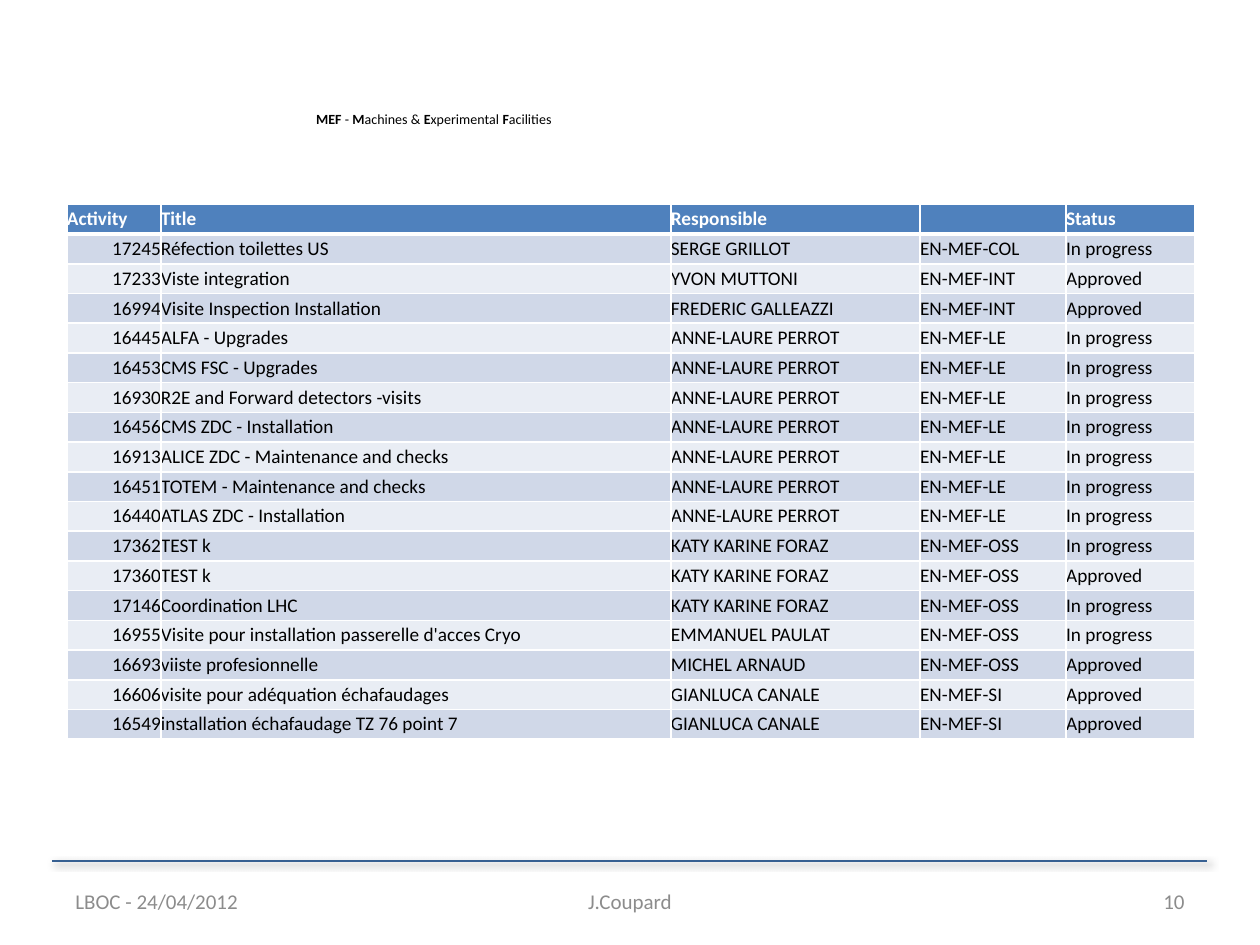
from lxml import etree
from pptx import Presentation
from pptx.dml.color import RGBColor
from pptx.enum.shapes import MSO_CONNECTOR
from pptx.enum.text import MSO_ANCHOR, MSO_AUTO_SIZE, PP_ALIGN
from pptx.oxml.ns import qn
from pptx.util import Pt

LEFT, CENTER, RIGHT = PP_ALIGN.LEFT, PP_ALIGN.CENTER, PP_ALIGN.RIGHT
MIDDLE = MSO_ANCHOR.MIDDLE
STRAIGHT = MSO_CONNECTOR.STRAIGHT
FIT_TEXT = MSO_AUTO_SIZE.SHAPE_TO_FIT_TEXT

FONT = "Calibri"
BLACK, WHITE, GREY = "000000", "FFFFFF", "8C8C8C"
RULE_BLUE, HEADER_BLUE = "376092", "4F81BD"
BANDS = ("E9EDF4", "D0D8E8")

COLUMN_WIDTHS = (53.8, 291.4, 142.4, 83.5, 73.3)
ROW_HEIGHT = 17
HEADER = ("Activity", "Title", "Responsible", "", "Status")
ACTIVITIES = (
    ("17245", "Réfection toilettes US", "SERGE GRILLOT", "COL", "In progress"),
    ("17233", "Viste integration", "YVON MUTTONI", "INT", "Approved"),
    ("16994", "Visite Inspection Installation", "FREDERIC GALLEAZZI", "INT", "Approved"),
    ("16445", "ALFA - Upgrades", "ANNE-LAURE PERROT", "LE", "In progress"),
    ("16453", "CMS FSC - Upgrades", "ANNE-LAURE PERROT", "LE", "In progress"),
    ("16930", "R2E and Forward detectors -visits", "ANNE-LAURE PERROT", "LE", "In progress"),
    ("16456", "CMS ZDC - Installation", "ANNE-LAURE PERROT", "LE", "In progress"),
    ("16913", "ALICE ZDC - Maintenance and checks", "ANNE-LAURE PERROT", "LE", "In progress"),
    ("16451", "TOTEM - Maintenance and checks", "ANNE-LAURE PERROT", "LE", "In progress"),
    ("16440", "ATLAS ZDC - Installation", "ANNE-LAURE PERROT", "LE", "In progress"),
    ("17362", "TEST k", "KATY KARINE FORAZ", "OSS", "In progress"),
    ("17360", "TEST k", "KATY KARINE FORAZ", "OSS", "Approved"),
    ("17146", "Coordination LHC", "KATY KARINE FORAZ", "OSS", "In progress"),
    ("16955", "Visite pour installation passerelle d'acces Cryo", "EMMANUEL PAULAT", "OSS", "In progress"),
    ("16693", "viiste profesionnelle", "MICHEL ARNAUD", "OSS", "Approved"),
    ("16606", "visite pour adéquation échafaudages", "GIANLUCA CANALE", "SI", "Approved"),
    ("16549", "installation échafaudage TZ 76 point 7", "GIANLUCA CANALE", "SI", "Approved"),
)
UNIT_NAME = (("MEF ", True), ("- ", False), ("M", True), ("achines & ", False),
             ("E", True), ("xperimental ", False), ("F", True), ("acilities", False))
FOOTERS = (
    ("LBOC - 24/04/2012", 36, 168, LEFT),
    ("J.Coupard", 246, 228, CENTER),
    ("10", 516, 168, RIGHT),
)


def color(value):
    return RGBColor.from_string(value)


def write(para, text, size=11, fill=BLACK, bold=False, align=LEFT):
    """Append one formatted span; empty text only fixes the line height."""
    para.alignment = align
    if not text:
        etree.SubElement(para._p, qn("a:endParaRPr"), sz=str(size * 100))
        return
    span = para.add_run()
    span.text = text
    span.font.name = FONT
    span.font.size = Pt(size)
    span.font.bold = bold
    span.font.color.rgb = color(fill)


def add_box(page, left, top, width, height):
    return page.shapes.add_textbox(Pt(left), Pt(top), Pt(width), Pt(height)).text_frame


def add_unit_name(page):
    frame = add_box(page, 173.5, 59.8, 150.5, 17.3)
    frame.word_wrap = False
    frame.auto_size = FIT_TEXT
    for text, bold in UNIT_NAME:
        write(frame.paragraphs[0], text, size=8, bold=bold)


def add_footer(page, text, left, width, align):
    frame = add_box(page, left, 500.5, width, 28.8)
    frame.word_wrap = True
    frame.vertical_anchor = MIDDLE
    write(frame.paragraphs[0], text, size=12, fill=GREY, align=align)


def add_footer_rule(page):
    rule = page.shapes.add_connector(STRAIGHT, Pt(30), Pt(492), Pt(690), Pt(492))
    rule.line.color.rgb = color(RULE_BLUE)
    rule.line.width = Pt(1.5)
    effects = etree.SubElement(rule._element.spPr, qn("a:effectLst"))
    shadow = etree.SubElement(effects, qn("a:outerShdw"), blurRad=str(Pt(4)),
                              dist=str(Pt(2)), dir=str(45 * 60000))
    tone = etree.SubElement(shadow, qn("a:srgbClr"), val=BLACK)
    etree.SubElement(tone, qn("a:alpha"), val="40000")


def set_borders(cell, top, bottom):
    for side, width in (("L", 1), ("R", 1), ("T", top), ("B", bottom)):
        line = etree.SubElement(cell._tc.get_or_add_tcPr(), qn(f"a:ln{side}"), w=str(Pt(width)))
        paint = etree.SubElement(line, qn("a:solidFill"))
        etree.SubElement(paint, qn("a:srgbClr"), val=WHITE)


def format_cell(cell, text, row, column):
    header = row == 0
    cell.margin_left = cell.margin_right = cell.margin_top = cell.margin_bottom = 0
    cell.vertical_anchor = MIDDLE
    set_borders(cell, top=3 if row == 1 else 1, bottom=3 if header else 1)
    cell.fill.solid()
    cell.fill.fore_color.rgb = color(HEADER_BLUE if header else BANDS[row % 2])
    write(cell.text_frame.paragraphs[0], text, fill=WHITE if header else BLACK,
          bold=header, align=RIGHT if column == 0 and not header else LEFT)


def add_activity_table(page):
    rows = [HEADER] + [(number, title, person, f"EN-MEF-{group}", status)
                       for number, title, person, group, status in ACTIVITIES]
    table = page.shapes.add_table(len(rows), len(HEADER), Pt(38.2), Pt(116.8),
                                  Pt(sum(COLUMN_WIDTHS)), Pt(ROW_HEIGHT * len(rows))).table
    for column, width in zip(table.columns, COLUMN_WIDTHS):
        column.width = Pt(width)
    for row, texts in enumerate(rows):
        table.rows[row].height = Pt(ROW_HEIGHT)
        for column, text in enumerate(texts):
            format_cell(table.cell(row, column), text, row, column)


def main():
    deck = Presentation()
    deck.slide_width, deck.slide_height = Pt(720), Pt(540)
    page = deck.slides.add_slide(deck.slide_layouts[6])
    add_footer_rule(page)
    add_unit_name(page)
    for text, left, width, align in FOOTERS:
        add_footer(page, text, left, width, align)
    add_activity_table(page)
    deck.save("out.pptx")


if __name__ == "__main__":
    main()
